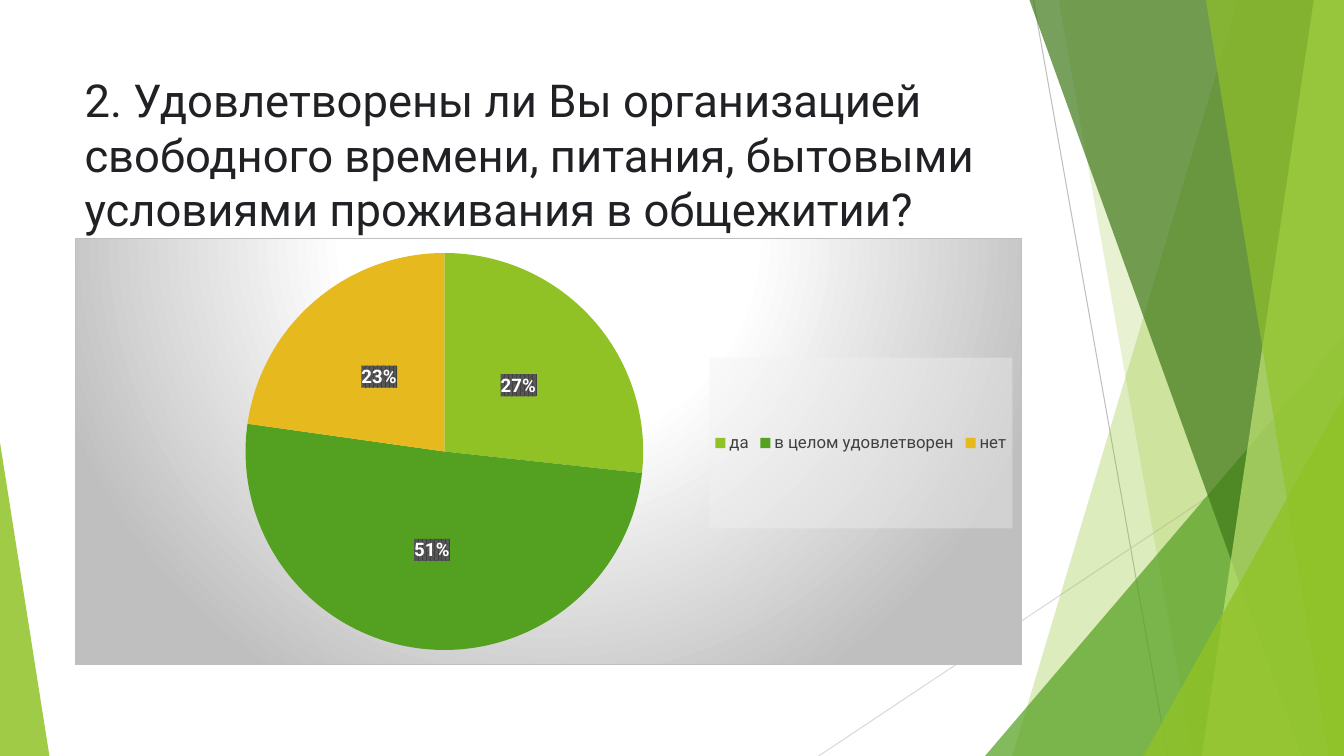
from lxml.etree import fromstring
from pptx import Presentation
from pptx.chart.data import CategoryChartData
from pptx.dml.color import RGBColor
from pptx.enum.chart import XL_CHART_TYPE, XL_LABEL_POSITION, XL_LEGEND_POSITION
from pptx.enum.shapes import MSO_CONNECTOR, MSO_SHAPE
from pptx.enum.text import MSO_ANCHOR
from pptx.oxml import parse_xml
from pptx.oxml.ns import nsdecls, qn
from pptx.util import Inches, Pt

COLORS = {
    "lime": "90C226", "green": "54A021", "forest": "3F7819", "pale": "C0E474",
    "gold": "E6B91E", "ink": "202124", "legend": "404040", "white": "FFFFFF",
    "silver": "BFBFBF", "mist": "D9D9D9", "panel": "F2F2F2", "stripe": "595959",
}
FONT = "Roboto"
WIDTH, HEIGHT = 13.33, 7.5
LEFT, CONTENT_WIDTH = 0.74, 9.4

deck = Presentation()
deck.slide_width, deck.slide_height = Inches(WIDTH), Inches(HEIGHT)
slide = deck.slides.add_slide(deck.slide_layouts[6])


def add_text(text, left, top, width, height, size, color):
    box = slide.shapes.add_textbox(*map(Inches, (left, top, width, height)))
    frame = box.text_frame
    frame.word_wrap = True
    frame.vertical_anchor = MSO_ANCHOR.TOP
    frame.text = text
    font = frame.paragraphs[0].font
    font.name, font.size = FONT, Pt(size)
    font.color.rgb = RGBColor.from_string(COLORS[color])


def paint(facet, color, opacity):
    facet.shadow.inherit = False
    facet.line.fill.background()
    facet.fill.solid()
    facet.fill.fore_color.rgb = RGBColor.from_string(COLORS[color])
    tint = facet.fill._xPr.find(qn("a:solidFill"))[0]
    tint.append(parse_xml(f'<a:alpha {nsdecls("a")} val="{opacity * 1000}"/>'))


for start, end, color in [
    ((10.25, 0), (11.58, HEIGHT), "silver"),
    ((WIDTH, 4.03), (8.12, HEIGHT), "mist"),
]:
    ray = slide.shapes.add_connector(MSO_CONNECTOR.STRAIGHT, *map(Inches, start + end))
    ray.line.width = Pt(0.75)
    ray.line.color.rgb = RGBColor.from_string(COLORS[color])
    ray._element.spPr.append(parse_xml(f'<a:effectLst {nsdecls("a")}/>'))

for kind, edge, color, opacity in [
    ("band", (12.28, 10.04), "lime", 30),
    ("band", (10.5, 11.83), "lime", 20),
    ("corner", (9.77, 3.33, WIDTH, 1), "green", 72),
    ("band", (10.21, 12.91), "forest", 70),
    ("band", (13.03, 11.92), "pale", 70),
    ("band", (11.96, 13.18), "lime", 65),
    ("corner", (11.34, 3.93, WIDTH, 1), "lime", 80),
    ("corner", (0, 4.39, 0.49, 0), "lime", 85),
]:
    if kind == "band":
        upper, lower = edge
        outline = slide.shapes.build_freeform(Inches(upper), 0)
        outline.add_line_segments(
            [(Inches(x), Inches(y)) for x, y in [(WIDTH, 0), (WIDTH, HEIGHT), (lower, HEIGHT)]],
            close=True,
        )
        facet = outline.convert_to_shape()
    else:
        left, top, right, apex = edge
        facet = slide.shapes.add_shape(
            MSO_SHAPE.ISOSCELES_TRIANGLE,
            *map(Inches, (left, top, right - left, HEIGHT - top)),
        )
        facet.adjustments[0] = apex
    paint(facet, color, opacity)

add_text(
    "2. Удовлетворены ли Вы организацией свободного времени, питания, бытовыми\v"
    "условиями проживания в общежитии?",
    left=LEFT, top=0.67, width=CONTENT_WIDTH, height=1.44, size=32.4, color="ink",
)

answers = [("да", 27, "lime"), ("в целом удовлетворен", 51, "green"), ("нет", 23, "gold")]
survey = CategoryChartData()
survey.categories = [answer for answer, share, color in answers]
survey.add_series("Series 1", [share for answer, share, color in answers])
chart = slide.shapes.add_chart(
    XL_CHART_TYPE.PIE, *map(Inches, (LEFT, 2.36, CONTENT_WIDTH, 4.24)), survey
).chart
chart.has_title = False
chart.font.name, chart.font.size = FONT, Pt(10)

pie = chart.plots[0]
pie.vary_by_categories = True
for index, (answer, share, color) in enumerate(answers):
    slice_fill = pie.series[0].points[index].format.fill
    slice_fill.solid()
    slice_fill.fore_color.rgb = RGBColor.from_string(COLORS[color])

pie.has_data_labels = True
labels = pie.data_labels
labels.show_value = True
labels.show_percentage = False
labels.number_format, labels.number_format_is_linked = '0"%"', False
labels.position = XL_LABEL_POSITION.CENTER
labels.font.name, labels.font.size, labels.font.bold = FONT, Pt(13.3), True
labels.font.color.rgb = RGBColor.from_string(COLORS["white"])
labels._element.find(qn("c:txPr")).addprevious(parse_xml(
    f'<c:spPr {nsdecls("c", "a")}><a:pattFill prst="pct75">'
    f'<a:fgClr><a:srgbClr val="{COLORS["legend"]}"/></a:fgClr>'
    f'<a:bgClr><a:srgbClr val="{COLORS["stripe"]}"/></a:bgClr>'
    '</a:pattFill></c:spPr>'
))

chart.has_legend = True
legend = chart.legend
legend.position = XL_LEGEND_POSITION.RIGHT
legend.include_in_layout = False
legend.font.name, legend.font.size = FONT, Pt(12)
legend.font.color.rgb = RGBColor.from_string(COLORS["legend"])
legend._element.find(qn("c:txPr")).addprevious(parse_xml(
    f'<c:spPr {nsdecls("c", "a")}><a:solidFill><a:srgbClr val="{COLORS["panel"]}">'
    '<a:alpha val="39000"/></a:srgbClr></a:solidFill></c:spPr>'
))

plot_area = chart._chartSpace.chart.plotArea
for region, target, bounds in [
    (plot_area, '<c:layoutTarget val="inner"/>', {"x": 0.18, "y": 0.03, "w": 0.42, "h": 0.94}),
    (legend._element, "", {"x": 0.67, "y": 0.28, "w": 0.32, "h": 0.4}),
]:
    for automatic in region.findall(qn("c:layout")):
        region.remove(automatic)
    modes = "".join(f'<c:{axis}Mode val="edge"/>' for axis in "xy")
    sizes = "".join(f'<c:{side} val="{share}"/>' for side, share in bounds.items())
    layout = parse_xml(
        f'<c:layout {nsdecls("c")}><c:manualLayout>{target}{modes}{sizes}'
        '</c:manualLayout></c:layout>'
    )
    region.insert(0 if region is plot_area else 1, layout)

stops = "".join(
    f'<a:gs pos="{position * 1000}"><a:srgbClr val="{COLORS[color]}"/></a:gs>'
    for position, color in [(0, "white"), (39, "white"), (100, "silver")]
)
chart._chartSpace.chart.addnext(parse_xml(
    f'<c:spPr {nsdecls("c", "a")}><a:gradFill><a:gsLst>{stops}</a:gsLst>'
    '<a:path path="circle"><a:fillToRect l="50000" t="-80000" r="50000" b="180000"/></a:path>'
    f'</a:gradFill><a:ln w="9525"><a:solidFill><a:srgbClr val="{COLORS["silver"]}"/>'
    '</a:solidFill></a:ln></c:spPr>'
))

deck.save("out.pptx")
